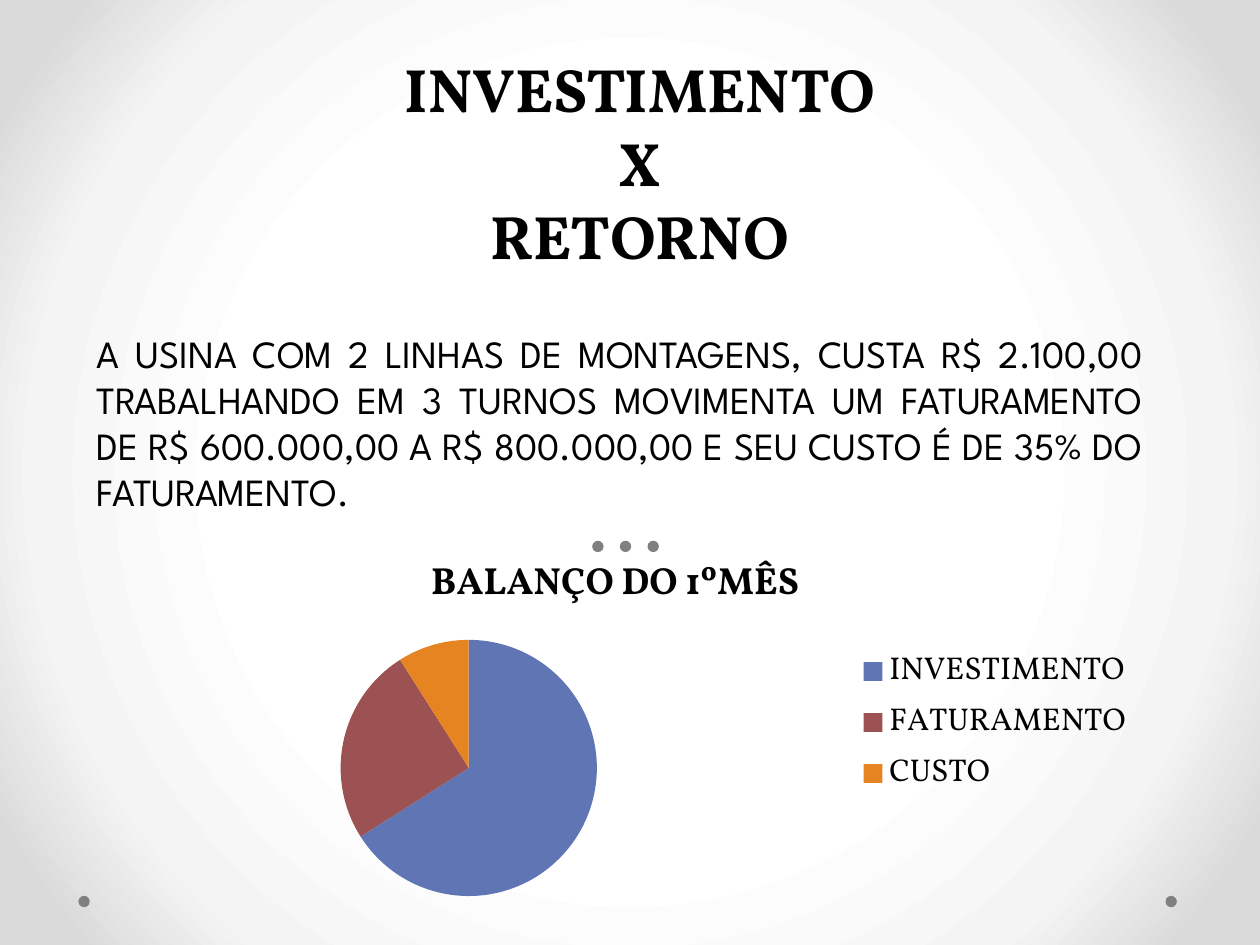
from dataclasses import dataclass

import lxml.etree
import pptx
import pptx.chart.data
import pptx.dml.color
import pptx.enum.chart
import pptx.enum.shapes
import pptx.enum.text
import pptx.oxml
import pptx.oxml.ns
import pptx.util

Pt = pptx.util.Pt
RGBColor = pptx.dml.color.RGBColor
PP_ALIGN = pptx.enum.text.PP_ALIGN
MSO_ANCHOR = pptx.enum.text.MSO_ANCHOR

BLACK = RGBColor(0x00, 0x00, 0x00)
GRAY = RGBColor(0x80, 0x80, 0x80)
BLUE = RGBColor(0x60, 0x76, 0xB4)
RED = RGBColor(0x9C, 0x52, 0x52)
ORANGE = RGBColor(0xE6, 0x84, 0x22)
BACKGROUND_STOPS = (
    (50, RGBColor(0xFF, 0xFF, 0xFF)),
    (76, RGBColor(0xF4, 0xF4, 0xF4)),
    (92, RGBColor(0xDA, 0xDA, 0xDA)),
)
SERIF = "Vollkorn"
SANS = "League Spartan"
DOT_SIZE = 6.5


@dataclass
class Dot:
    left: float
    top: float


@dataclass
class TextBlock:
    text: str
    left: float
    top: float
    width: float
    height: float
    font: str
    size: float
    alignment: PP_ALIGN
    anchor: MSO_ANCHOR
    bold: bool = False
    space_before: float = 0


@dataclass
class Slice:
    category: str
    value: int
    color: RGBColor


CORNER_DOTS = [Dot(left, 511.9) for left in (44.8, 666)]
CENTER_DOTS = [Dot(338.4 + 15.8 * index, 309) for index in range(3)]

TEXT_BLOCKS = [
    TextBlock("INVESTIMENTO\vX\vRETORNO", 59.8, 15.1, 612, 144,
              SERIF, 35, PP_ALIGN.CENTER, MSO_ANCHOR.BOTTOM, bold=True),
    TextBlock("A USINA COM 2 LINHAS DE MONTAGENS, CUSTA R$ 2.100,00 "
              "TRABALHANDO EM 3 TURNOS MOVIMENTA UM FATURAMENTO DE "
              "R$ 600.000,00 A R$ 800.000,00 E SEU CUSTO É DE 35% DO "
              "FATURAMENTO.", 48.2, 185, 612, 113,
              SANS, 22, PP_ALIGN.JUSTIFY, MSO_ANCHOR.TOP, space_before=4.4),
]

CHART_TITLE = "BALANÇO DO 1ºMÊS"
SLICES = [
    Slice("INVESTIMENTO", 66, BLUE),
    Slice("FATURAMENTO", 25, RED),
    Slice("CUSTO", 9, ORANGE),
]


def paint_background(slide: pptx.slide.Slide) -> None:
    slide.background.fill.gradient()
    gradient = slide.element.find(".//" + pptx.oxml.ns.qn("a:gradFill"))
    stops = "".join(
        f'<a:gs pos="{position * 1000}"><a:srgbClr val="{color}"/></a:gs>'
        for position, color in BACKGROUND_STOPS)
    radial = pptx.oxml.parse_xml(
        f'<a:gradFill {pptx.oxml.ns.nsdecls("a")} rotWithShape="1">'
        f'<a:gsLst>{stops}</a:gsLst><a:path path="circle">'
        '<a:fillToRect l="50000" t="50000" r="50000" b="50000"/>'
        '</a:path></a:gradFill>')
    gradient.getparent().replace(gradient, radial)


def draw_dot(slide: pptx.slide.Slide, dot: Dot) -> None:
    shape = slide.shapes.add_shape(
        pptx.enum.shapes.MSO_SHAPE.OVAL,
        Pt(dot.left), Pt(dot.top), Pt(DOT_SIZE), Pt(DOT_SIZE))
    shape.shadow.inherit = False
    shape.fill.solid()
    shape.fill.fore_color.rgb = GRAY
    shape.line.fill.background()


def draw_text(slide: pptx.slide.Slide, block: TextBlock) -> None:
    shape = slide.shapes.add_textbox(
        Pt(block.left), Pt(block.top), Pt(block.width), Pt(block.height))
    text_frame = shape.text_frame
    text_frame.word_wrap = True
    text_frame.vertical_anchor = block.anchor
    text_frame.text = block.text
    paragraph = text_frame.paragraphs[0]
    paragraph.alignment = block.alignment
    paragraph.space_before = Pt(block.space_before)
    for run in paragraph.runs:
        style_font(run.font, block.font, block.size, block.bold)


def style_font(font: pptx.text.text.Font, name: str, size: float,
               bold: bool = False) -> None:
    font.name = name
    font.size = Pt(size)
    font.bold = bold
    font.color.rgb = BLACK


def draw_pie(slide: pptx.slide.Slide) -> None:
    data = pptx.chart.data.CategoryChartData()
    data.categories = [part.category for part in SLICES]
    data.add_series(CHART_TITLE, [part.value for part in SLICES])
    chart = slide.shapes.add_chart(
        pptx.enum.chart.XL_CHART_TYPE.PIE,
        Pt(48.2), Pt(303.8), Pt(607), Pt(218.2), data).chart
    style_font(chart.font, SERIF, 18)

    chart.has_title = True
    title_frame = chart.chart_title.text_frame
    title_frame.text = CHART_TITLE
    style_font(title_frame.paragraphs[0].runs[0].font, SERIF, 21.6, bold=True)

    chart.has_legend = True
    chart.legend.position = pptx.enum.chart.XL_LEGEND_POSITION.RIGHT
    chart.legend.include_in_layout = False

    plot = chart.plots[0]
    plot.vary_by_categories = True
    for index, part in enumerate(SLICES):
        fill = plot.series[0].points[index].format.fill
        fill.solid()
        fill.fore_color.rgb = part.color


def main() -> None:
    presentation = pptx.Presentation()
    presentation.slide_width = Pt(720)
    presentation.slide_height = Pt(540)
    slide = presentation.slides.add_slide(presentation.slide_layouts[6])

    # Background and ornaments
    paint_background(slide)
    for dot in CORNER_DOTS + CENTER_DOTS:
        draw_dot(slide, dot)

    # Title and description
    for block in TEXT_BLOCKS:
        draw_text(slide, block)

    # First month balance
    draw_pie(slide)

    presentation.save("out.pptx")


if __name__ == "__main__":
    main()
